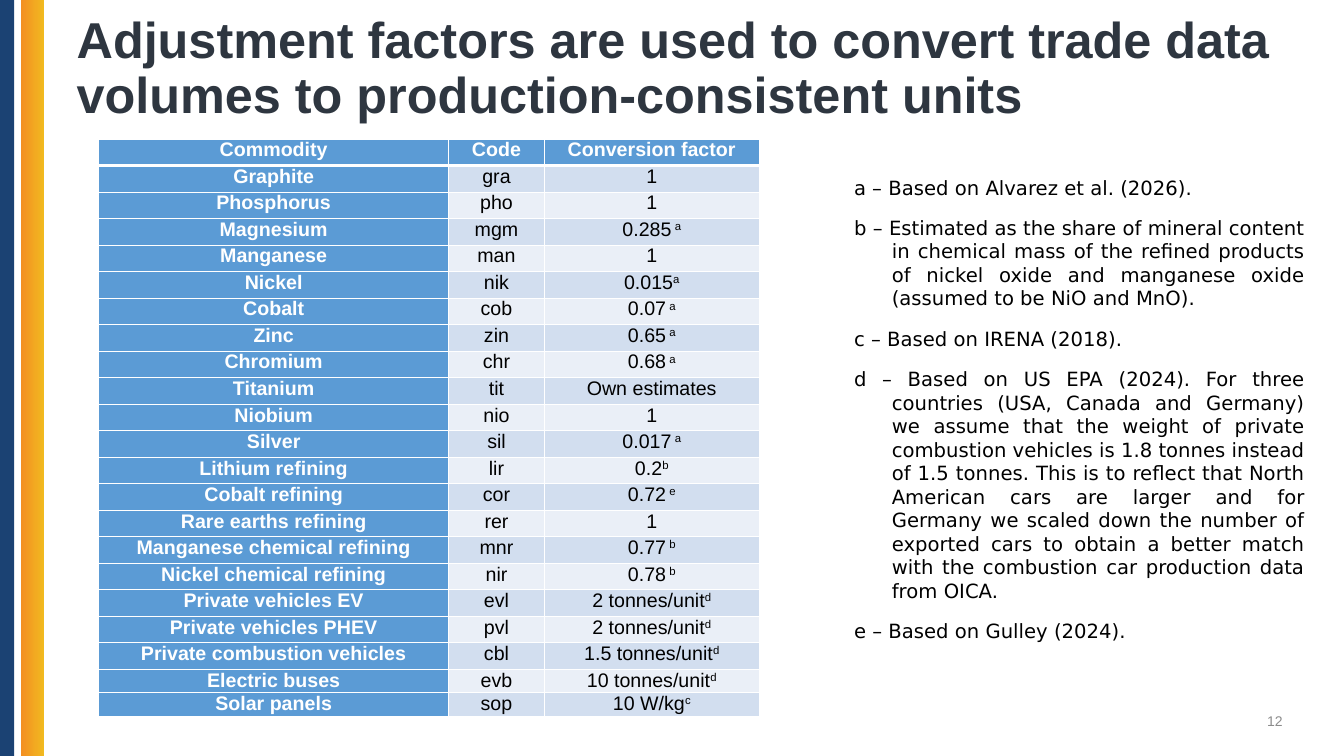
import pptx
import pptx.util
import pptx.dml.color
import pptx.enum.shapes
import pptx.enum.text
import pptx.oxml
import pptx.oxml.ns

TITLE = "Adjustment factors are used to convert trade data volumes to production-consistent units"
PAGE = "12"
HEADER = ("Commodity", "Code", "Conversion factor")
FACTORS = [
    ("Graphite", "gra", "1"),
    ("Phosphorus", "pho", "1"),
    ("Magnesium", "mgm", "0.285^ a"),
    ("Manganese", "man", "1"),
    ("Nickel", "nik", "0.015^a"),
    ("Cobalt", "cob", "0.07^ a"),
    ("Zinc", "zin", "0.65^ a"),
    ("Chromium", "chr", "0.68^ a"),
    ("Titanium", "tit", "Own estimates"),
    ("Niobium", "nio", "1"),
    ("Silver", "sil", "0.017^ a"),
    ("Lithium refining", "lir", "0.2^b"),
    ("Cobalt refining", "cor", "0.72^ e"),
    ("Rare earths refining", "rer", "1"),
    ("Manganese chemical refining", "mnr", "0.77^ b"),
    ("Nickel chemical refining", "nir", "0.78^ b"),
    ("Private vehicles EV", "evl", "2 tonnes/unit^d"),
    ("Private vehicles PHEV", "pvl", "2 tonnes/unit^d"),
    ("Private combustion vehicles", "cbl", "1.5 tonnes/unit^d"),
    ("Electric buses", "evb", "10 tonnes/unit^d"),
    ("Solar panels", "sop", "10 W/kg^c"),
]
NOTES = [
    "a – Based on Alvarez et al. (2026).",
    "b – Estimated as the share of mineral content in chemical mass of the refined products of nickel oxide and manganese oxide (assumed to be NiO and MnO).",
    "c – Based on IRENA (2018).",
    "d – Based on US EPA (2024). For three countries (USA, Canada and Germany) we assume that the weight of private combustion vehicles is 1.8 tonnes instead of 1.5 tonnes. This is to reflect that North American cars are larger and for Germany we scaled down the number of exported cars to obtain a better match with the combustion car production data from OICA.",
    "e – Based on Gulley (2024).",
]
WIDTH, HEIGHT = 13.33, 7.5
COLUMNS = (3.47, 0.95, 2.13)
TALL_ROWS, TALL_HEIGHT, LOW_ROW = 20, 5.26, 0.22
BLUE, BANDS, WHITE = "5B9BD5", ("D2DEEF", "EAEFF7"), "FFFFFF"
ALIGN = pptx.enum.text.PP_ALIGN
ANCHOR = pptx.enum.text.MSO_ANCHOR
inch = pptx.util.Inches


def color(value):
    return pptx.dml.color.RGBColor.from_string(value)


def put(obj, **values):
    for name, value in values.items():
        setattr(obj, name, value)


def place(sp, *box):
    put(sp, **dict(zip(("left", "top", "width", "height"), map(inch, box))))


def write(p, text, size, fill, name="Arial", bold=False, **layout):
    put(p, **layout)
    base, _, mark = text.partition("^")
    for part, raised in ((base, False), (mark, True)):
        if part:
            r = p.add_run()
            r.text = part
            put(r.font, size=pptx.util.Pt(size), name=name, bold=bold)
            r.font.color.rgb = color(fill)
            if raised:
                r._r.get_or_add_rPr().set("baseline", "30000")


def add_bar(left, width):
    sp = s.shapes.add_shape(pptx.enum.shapes.MSO_SHAPE.RECTANGLE, inch(left), 0, inch(width), inch(HEIGHT))
    sp.shadow.inherit = False
    sp.line.fill.background()
    return sp.fill


def add_borders(cell, bottom):
    for side, width in (("L", 1), ("R", 1), ("T", 1), ("B", bottom)):
        cell._tc.get_or_add_tcPr().append(pptx.oxml.parse_xml(
            f'<a:ln{side} {pptx.oxml.ns.nsdecls("a")} w="{width * 12700}"><a:solidFill>'
            f'<a:srgbClr val="{WHITE}"/></a:solidFill></a:ln{side}>'))


def add_table():
    rows = [HEADER] + FACTORS
    table = s.shapes.add_table(len(rows), len(COLUMNS), inch(0.98), inch(1.38),
                               inch(sum(COLUMNS)), inch(TALL_HEIGHT)).table
    for column, width in zip(table.columns, COLUMNS):
        column.width = inch(width)
    for i, row in enumerate(rows):
        table.rows[i].height = inch(TALL_HEIGHT / TALL_ROWS if i < TALL_ROWS else LOW_ROW)
        for j, text in enumerate(row):
            cell = table.cell(i, j)
            head = i == 0 or j == 0
            put(cell, margin_left=inch(0.07), margin_right=inch(0.07), margin_top=0, margin_bottom=0)
            add_borders(cell, 1 if i else 3)
            cell.fill.solid()
            cell.fill.fore_color.rgb = color(BLUE if head else BANDS[(i - 1) % 2])
            write(cell.text_frame.paragraphs[0], text, 14, WHITE if head else "000000",
                  bold=head, alignment=ALIGN.CENTER)


def add_notes(sp):
    place(sp, 8.37, 1.69, 4.67, 4.54)
    tf = sp.text_frame
    put(tf, auto_size=pptx.enum.text.MSO_AUTO_SIZE.SHAPE_TO_FIT_TEXT, word_wrap=True,
        vertical_anchor=ANCHOR.TOP)
    for i, note in enumerate(NOTES):
        p = tf.add_paragraph() if i else tf.paragraphs[0]
        pPr = p._p.get_or_add_pPr()
        put(pPr, marL=0, indent=0)
        pPr.append(pptx.oxml.parse_xml(f'<a:buNone {pptx.oxml.ns.nsdecls("a")}/>'))
        write(p, note, 14, "000000", "DejaVu Sans", space_before=0, space_after=pptx.util.Pt(12),
              alignment=ALIGN.LEFT if note == NOTES[-1] else ALIGN.JUSTIFY)


prs = pptx.Presentation()
put(prs, slide_width=inch(WIDTH), slide_height=inch(HEIGHT))
s = prs.slides.add_slide(prs.slide_layouts[1])

fill = add_bar(-0.03, 0.17)
fill.solid()
fill.fore_color.rgb = color("1B4273")
fill = add_bar(0.21, 0.23)
fill.gradient()
fill.gradient_angle = 0
for stop, value, position in zip(fill.gradient_stops, ("F38F22", "F1BA20"), (0, 1)):
    stop.color.rgb = color(value)
    stop.position = position

title = s.shapes.title
place(title, 0.66, 0, 12.3, 1.38)
put(title.text_frame, vertical_anchor=ANCHOR.MIDDLE, word_wrap=True,
    auto_size=pptx.enum.text.MSO_AUTO_SIZE.NONE)
write(title.text_frame.paragraphs[0], TITLE, 36, "2E3640", bold=True,
      alignment=ALIGN.LEFT, line_spacing=0.9)

add_table()
add_notes(s.placeholders[1])

number = s.shapes.add_textbox(inch(9.82), inch(6.95), inch(3), inch(0.4))
put(number.text_frame, vertical_anchor=ANCHOR.MIDDLE, word_wrap=True)
write(number.text_frame.paragraphs[0], PAGE, 10, "8C8C8C", alignment=ALIGN.RIGHT)

prs.save("out.pptx")
